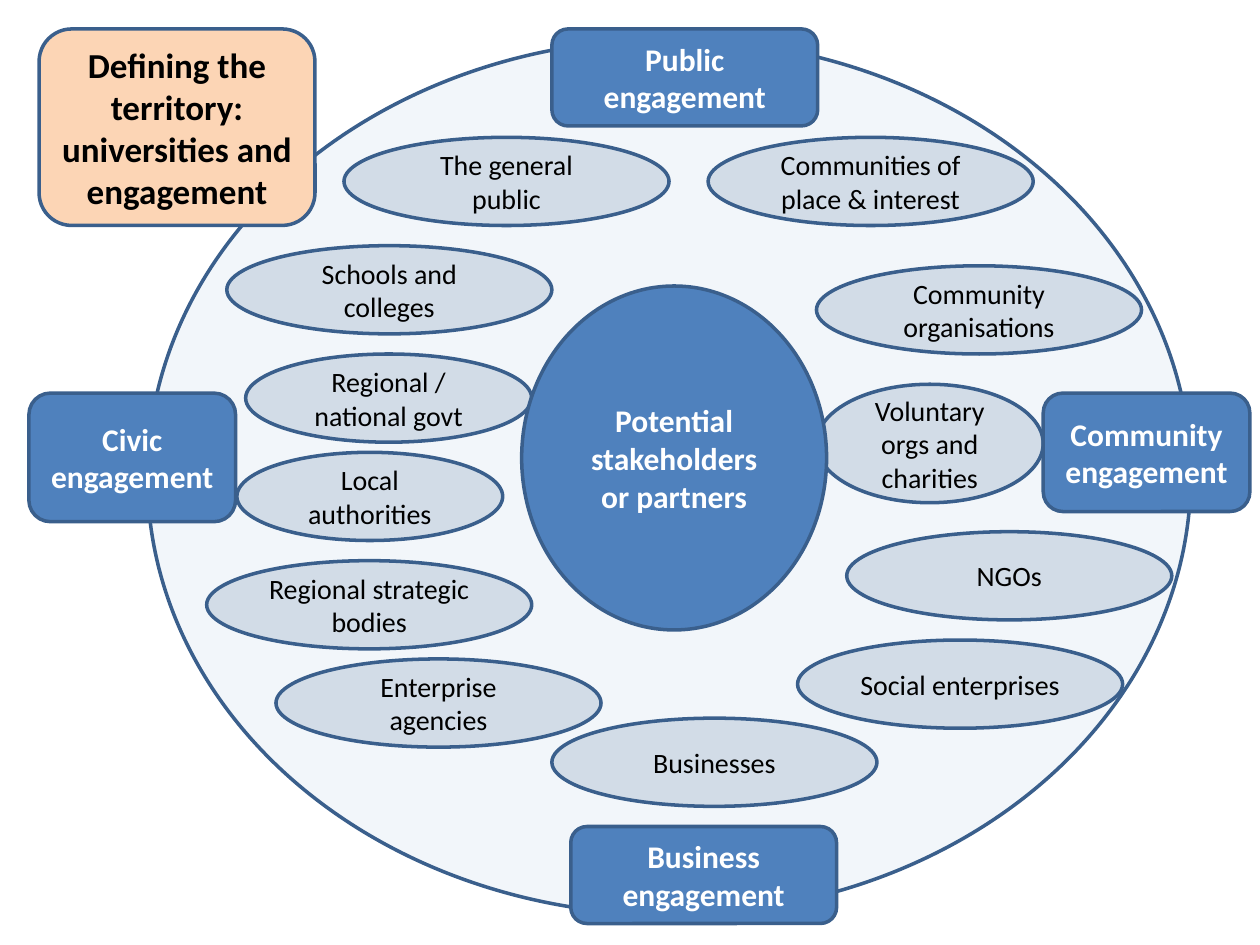
from dataclasses import dataclass

from lxml import etree
from pptx import Presentation
from pptx import util as u
from pptx.dml import color
from pptx.enum import shapes, text
from pptx.oxml import ns

SCALE = 9144


def px(length):
    return u.Emu(length * SCALE)


@dataclass(frozen=True)
class Theme:
    font: str = "Calibri"
    blue: str = "4F81BD"
    navy: str = "1F497D"
    outline: str = "3A5F8C"
    peach: str = "FCD5B5"
    black: str = "000000"
    white: str = "FFFFFF"
    stakeholder_size: int = 16
    heading_size: int = 18
    title_size: int = 20
    line_width: int = 2
    territory_alpha: int = 7
    stakeholder_alpha: int = 15


class EngagementMap:
    def __init__(self, slide, theme):
        self.slide = slide
        self.theme = theme

    def outlined(self, kind, box, fill, alpha=100):
        shape = self.slide.shapes.add_shape(kind, *map(px, box))
        shape.shadow.inherit = False
        shape.fill.solid()
        shape.fill.fore_color.rgb = color.RGBColor.from_string(fill)
        if alpha < 100:
            fill_color = shape.fill._xPr.find(".//" + ns.qn("a:srgbClr"))
            etree.SubElement(fill_color, ns.qn("a:alpha"), val=str(alpha * 1000))
        shape.line.color.rgb = color.RGBColor.from_string(self.theme.outline)
        shape.line.width = u.Pt(self.theme.line_width)
        return shape

    def label(self, shape, wording, size, ink, bold=False):
        frame = shape.text_frame
        frame.word_wrap = True
        frame.vertical_anchor = text.MSO_ANCHOR.MIDDLE
        frame.text = wording
        for paragraph in frame.paragraphs:
            paragraph.alignment = text.PP_ALIGN.CENTER
            paragraph.font.name = self.theme.font
            paragraph.font.size = u.Pt(size)
            paragraph.font.bold = bold
            paragraph.font.color.rgb = color.RGBColor.from_string(ink)

    def territory(self, box):
        self.outlined(shapes.MSO_SHAPE.OVAL, box, self.theme.blue,
                      self.theme.territory_alpha)

    def stakeholder(self, wording, left, top, width=258, height=70):
        shape = self.outlined(shapes.MSO_SHAPE.OVAL, (left, top, width, height),
                              self.theme.navy, self.theme.stakeholder_alpha)
        self.label(shape, wording, self.theme.stakeholder_size, self.theme.black)

    def heading(self, wording, box, kind=shapes.MSO_SHAPE.ROUNDED_RECTANGLE):
        shape = self.outlined(kind, box, self.theme.blue)
        self.label(shape, wording, self.theme.heading_size, self.theme.white, True)

    def title(self, wording, box):
        shape = self.outlined(shapes.MSO_SHAPE.ROUNDED_RECTANGLE, box,
                              self.theme.peach)
        self.label(shape, wording, self.theme.title_size, self.theme.black, True)

    def hub(self, wording, box):
        self.heading(wording, box, shapes.MSO_SHAPE.OVAL)


STAKEHOLDERS = [
    ("Communities of place & interest", 562, 109),
    ("The general public", 273, 109),
    ("Community organisations", 648, 211),
    ("Voluntary orgs and charities", 648, 305, 180, 94),
    ("NGOs", 672, 422),
    ("Social enterprises", 633, 508),
    ("Businesses", 438, 570),
    ("Enterprise agencies", 219, 523),
    ("Regional strategic bodies", 164, 445),
    ("Local authorities", 188, 359, 211),
    ("Regional / national govt", 195, 281, 227),
    ("Schools and colleges", 180, 195),
]

HEADINGS = [
    ("Public engagement", (438, 23, 211, 77)),
    ("Civic\nengagement", (23, 312, 164, 102)),
    ("Community engagement", (828, 312, 164, 94)),
    ("Business engagement", (453, 656, 211, 77)),
]


def main():
    presentation = Presentation()
    presentation.slide_width = px(1000)
    presentation.slide_height = px(750)
    slide = presentation.slides.add_slide(presentation.slide_layouts[6])
    engagement_map = EngagementMap(slide, Theme())

    engagement_map.territory((117, 31, 828, 695))
    for stakeholder in STAKEHOLDERS:
        engagement_map.stakeholder(*stakeholder)
    for wording, box in HEADINGS:
        engagement_map.heading(wording, box)
    engagement_map.title("Defining the territory: universities and engagement",
                         (31, 23, 219, 156))
    engagement_map.hub("Potential stakeholders or partners", (414, 227, 242, 273))

    presentation.save("out.pptx")


if __name__ == "__main__":
    main()
